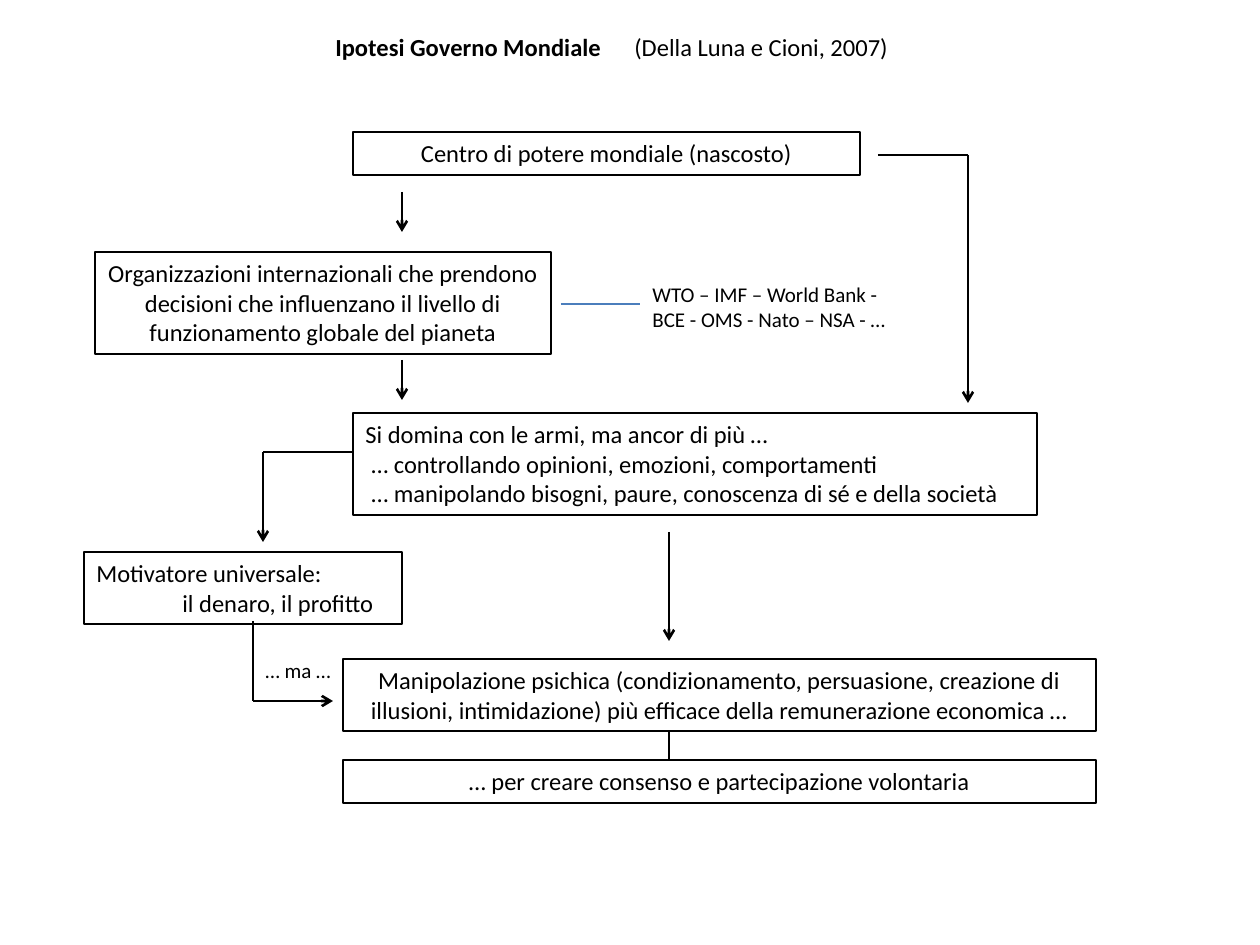
from lxml.etree import SubElement
from pptx import Presentation
from pptx.dml.color import RGBColor
from pptx.enum.shapes import MSO_CONNECTOR, MSO_SHAPE
from pptx.enum.text import MSO_ANCHOR, PP_ALIGN
from pptx.oxml.ns import qn
from pptx.util import Pt

PX = 914400 / 126
COLORS = {"ink": "000000", "link": "4B7EBC"}
FONT = "Calibri"


def px(n):
    return round(n * PX)


def color(name):
    return RGBColor.from_string(COLORS[name])


class Diagram:
    def __init__(self, slide):
        self.s = slide

    def add_text(self, sp, paragraphs, size, align):
        """Fill a shape; a paragraph is (indent in px, text)."""
        tf = sp.text_frame
        tf.word_wrap = True
        tf.vertical_anchor = MSO_ANCHOR.TOP
        for i, (indent, text) in enumerate(paragraphs):
            p = tf.paragraphs[0] if i == 0 else tf.add_paragraph()
            p.alignment = align
            if indent:
                p._p.get_or_add_pPr().set("marL", str(px(indent)))
            self.add_run(p, text, size)

    def add_run(self, p, text, size, bold=False):
        r = p.add_run()
        r.text = text
        r.font.name = FONT
        r.font.size = Pt(size)
        r.font.bold = bold
        r.font.color.rgb = color("ink")

    def box(self, x, y, w, h, *paragraphs, align=PP_ALIGN.CENTER):
        sp = self.s.shapes.add_shape(MSO_SHAPE.RECTANGLE, px(x), px(y), px(w), px(h))
        sp.shadow.inherit = False
        sp.fill.background()
        sp.line.color.rgb = color("ink")
        sp.line.width = Pt(0.75)
        self.add_text(sp, paragraphs, 14, align)

    def label(self, x, y, w, h, text):
        sp = self.s.shapes.add_textbox(px(x), px(y), px(w), px(h))
        self.add_text(sp, [(0, text)], 12, PP_ALIGN.LEFT)

    def title(self, x, y, w, h, name, source, tab):
        """Bold name, then the source set at a tab stop."""
        tf = self.s.shapes.add_textbox(px(x), px(y), px(w), px(h)).text_frame
        tf.word_wrap = True
        p = tf.paragraphs[0]
        tabs = SubElement(p._p.get_or_add_pPr(), qn("a:tabLst"))
        SubElement(tabs, qn("a:tab"), pos=str(px(tab)), algn="l")
        self.add_run(p, name + "\t", 14, bold=True)
        self.add_run(p, source, 14)

    def line(self, start, end, arrow=False, ink="ink", width=1.5):
        sp = self.s.shapes.add_connector(
            MSO_CONNECTOR.STRAIGHT, *map(px, start), *map(px, end))
        sp.line.color.rgb = color(ink)
        sp.line.width = Pt(width)
        if arrow:
            SubElement(sp.line._get_or_add_ln(), qn("a:tailEnd"), type="arrow")
        SubElement(sp._element.spPr, qn("a:effectLst"))

    def elbow(self, start, corner, end):
        self.line(start, corner)
        self.line(corner, end, arrow=True)


def main():
    prs = Presentation()
    prs.slide_width, prs.slide_height = px(1260), px(945)
    d = Diagram(prs.slides.add_slide(prs.slide_layouts[6]))

    d.title(323, 26, 595, 43, "Ipotesi Governo Mondiale",
            "(Della Luna e Cioni, 2007)", tab=299)

    d.box(353, 132, 507, 43, (0, "Centro di potere mondiale (nascosto)"))
    d.box(95, 252, 456, 102,
          (0, "Organizzazioni internazionali che prendono decisioni che "
              "influenzano il livello di funzionamento globale del pianeta"))
    d.box(353, 413, 684, 102,
          (0, "Si domina con le armi, ma ancor di più …"),
          (6, "… controllando opinioni, emozioni, comportamenti"),
          (6, "… manipolando bisogni, paure, conoscenza di sé e della società"),
          align=PP_ALIGN.LEFT)
    d.box(84, 552, 318, 72,
          (0, "Motivatore universale:"),
          (86, "il denaro, il profitto"),
          align=PP_ALIGN.LEFT)
    d.box(343, 659, 753, 72,
          (0, "Manipolazione psichica (condizionamento, persuasione, creazione di "
              "illusioni, intimidazione) più efficace della remunerazione economica …"))
    d.box(343, 760, 753, 43,
          (0, "… per creare consenso e partecipazione volontaria"))

    d.label(640, 275, 277, 63, "WTO – IMF – World Bank - BCE - OMS - Nato – NSA - …")
    d.label(253, 651, 100, 38, "… ma …")

    for x, top, bottom in ((402, 192, 232), (402, 360, 400), (669, 532, 641)):
        d.line((x, top), (x, bottom), arrow=True)
    d.elbow((878, 155), (968, 155), (968, 403))
    d.elbow((353, 452), (263, 452), (263, 542))
    d.elbow((253, 621), (253, 701), (333, 701))
    d.line((669, 731), (669, 760))
    d.line((561, 304), (640, 304), ink="link", width=0.75)

    prs.save("out.pptx")


if __name__ == "__main__":
    main()
